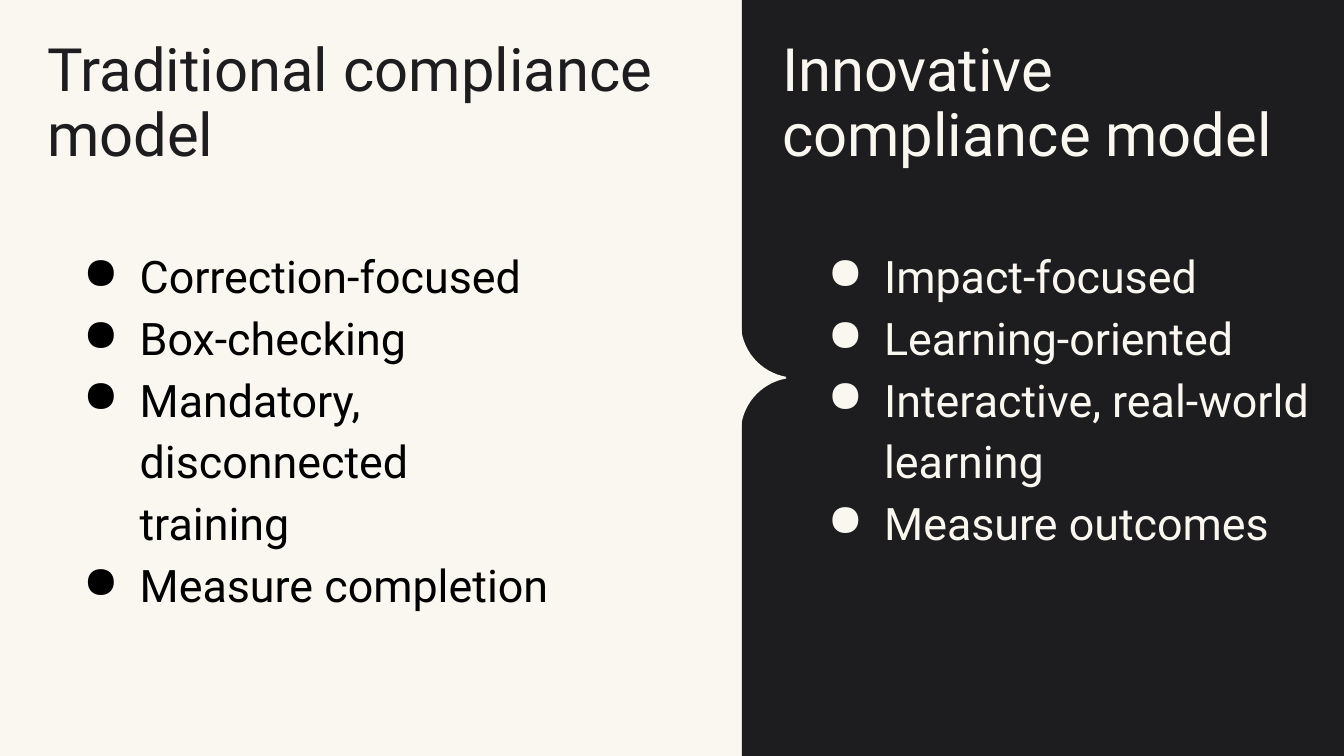
"""Build a slide that contrasts the traditional and innovative compliance models."""
from math import cos, radians, sin

from lxml.etree import SubElement
from pptx import Presentation
from pptx.dml.color import RGBColor
from pptx.enum.shapes import MSO_SHAPE
from pptx.enum.text import MSO_ANCHOR, MSO_AUTO_SIZE, PP_ALIGN
from pptx.oxml.ns import qn
from pptx.util import Cm, Pt

CREAM = RGBColor(0xFA, 0xF6, 0xF0)
CHARCOAL = RGBColor(0x1D, 0x1D, 0x1F)
BLACK = RGBColor(0x00, 0x00, 0x00)


def fill_frame(shape, box, lines, size, color, spacing):
    shape.left, shape.top, shape.width, shape.height = [Cm(length) for length in box]
    frame = shape.text_frame
    frame.text = "\n".join(lines)
    frame.word_wrap = True
    frame.auto_size = MSO_AUTO_SIZE.NONE
    frame.vertical_anchor = MSO_ANCHOR.TOP
    frame.margin_left = frame.margin_top = frame.margin_right = frame.margin_bottom = 0
    for paragraph in frame.paragraphs:
        paragraph.alignment = PP_ALIGN.LEFT
        paragraph.line_spacing = spacing
        paragraph.font.name = "Roboto"
        paragraph.font.size = Pt(size)
        paragraph.font.color.rgb = color
    return frame.paragraphs


def add_bullet(paragraph, color):
    properties = paragraph._p.get_or_add_pPr()
    properties.set("marL", str(Cm(1.27)))
    properties.set("indent", str(-Cm(1.07)))
    bullet_color = SubElement(properties, qn("a:buClr"))
    SubElement(bullet_color, qn("a:srgbClr"), val=str(color))
    bullet = SubElement(properties, qn("a:buChar"), char="●")
    font_defaults = properties.find(qn("a:defRPr"))
    font_defaults.addprevious(bullet_color)
    font_defaults.addprevious(bullet)


presentation = Presentation()
presentation.slide_width = Cm(25.4)
presentation.slide_height = Cm(14.29)
slide = presentation.slides.add_slide(presentation.slide_layouts[5])
slide.background.fill.solid()
slide.background.fill.fore_color.rgb = CREAM

innovative_panel = slide.shapes.add_shape(
    MSO_SHAPE.RECTANGLE, Cm(14.02), 0, Cm(11.38), presentation.slide_height
)

radius, center_x, tip_y = 1.04, 15.04, 7.14
upper_curve = [
    (center_x + radius * cos(radians(angle)), radius * (sin(radians(angle)) - 1))
    for angle in range(180, 99, -5)
]
lower_curve = [(x, -offset) for x, offset in reversed(upper_curve)]
outline = [(Cm(x), Cm(tip_y + offset)) for x, offset in upper_curve + lower_curve]
builder = slide.shapes.build_freeform(*outline[0])
builder.add_line_segments(outline[1:], close=True)
pointer = builder.convert_to_shape()

for shape, color in ((innovative_panel, CHARCOAL), (pointer, CREAM)):
    shape.shadow.inherit = False
    shape.fill.solid()
    shape.fill.fore_color.rgb = color
    shape.line.fill.background()

traditional_heading = slide.shapes.title
innovative_heading = slide.shapes.add_textbox(0, 0, 0, 0)
fill_frame(traditional_heading, (0.89, 0.76, 11.71, 2.92),
           ["Traditional compliance model"], 32, CHARCOAL, 0.9)
fill_frame(innovative_heading, (14.78, 0.76, 10.64, 2.92),
           ["Innovative compliance model"], 32, CREAM, 0.9)

columns = [
    ((1.37, 4.55, 9.17, 3.3), BLACK,
     ["Correction-focused", "Box-checking",
      "Mandatory, disconnected training", "Measure completion"]),
    ((15.44, 4.55, 9.45, 5.74), CREAM,
     ["Impact-focused", "Learning-oriented",
      "Interactive, real-world learning", "Measure outcomes"]),
]
for box, color, traits in columns:
    trait_list = slide.shapes.add_textbox(0, 0, 0, 0)
    paragraphs = fill_frame(trait_list, box, traits, 24, color, 1.15)
    paragraphs[0].space_before = Pt(9)
    for paragraph in paragraphs:
        add_bullet(paragraph, color)

presentation.save("out.pptx")
